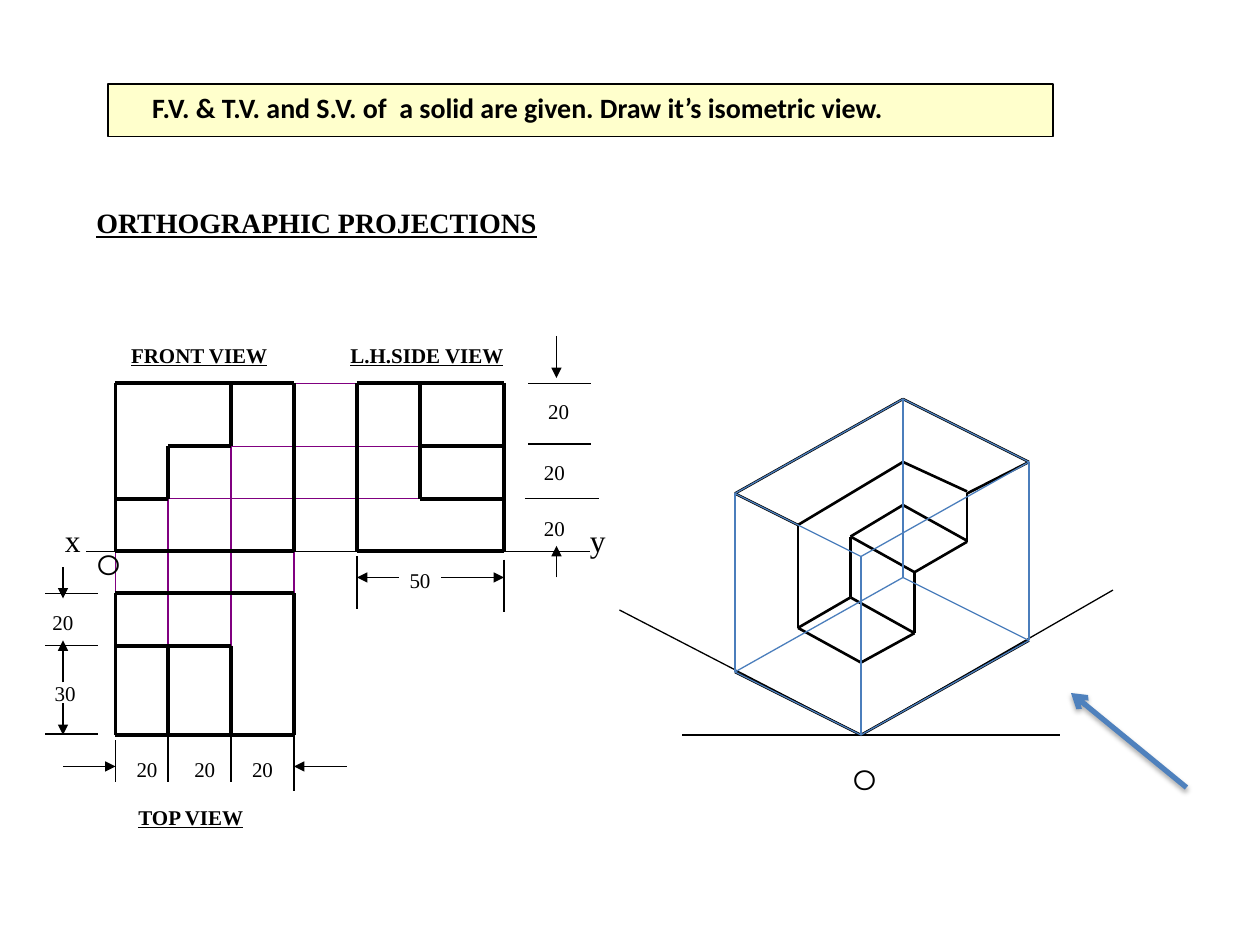
from itertools import pairwise

from lxml import etree
from pptx import Presentation
from pptx.dml.color import RGBColor
from pptx.enum.shapes import MSO_CONNECTOR, MSO_SHAPE
from pptx.enum.text import MSO_ANCHOR, MSO_AUTO_SIZE, PP_ALIGN
from pptx.oxml.ns import qn
from pptx.util import Inches, Pt

STRAIGHT = MSO_CONNECTOR.STRAIGHT
RECTANGLE = MSO_SHAPE.RECTANGLE
TOP = MSO_ANCHOR.TOP
FIT = MSO_AUTO_SIZE.SHAPE_TO_FIT_TEXT
LEFT, CENTER = PP_ALIGN.LEFT, PP_ALIGN.CENTER

COLUMNS, ROWS = 120, 90
BLACK, PURPLE, BLUE, ARROW_BLUE, CREAM = "000000", "800080", "4B7EBC", "4F81BD", "FFFFCC"
THIN, SOLID_EDGE, VIEW_EDGE, POINTER = 0.75, 1.5, 2.25, 3


def color(value):
    """Turn a hex string into a colour."""
    return RGBColor.from_string(value)


class Drawing:
    """Draws on one slide with a grid of columns and rows."""

    def __init__(self, presentation):
        """Add a blank slide and measure its grid."""
        self.slide = presentation.slides.add_slide(presentation.slide_layouts[6])
        self.column = presentation.slide_width / COLUMNS
        self.row = presentation.slide_height / ROWS
        self.font = "Times New Roman"

    def place(self, x, y):
        """Convert columns and rows to slide lengths."""
        return round(x * self.column), round(y * self.row)

    def line(self, start, end, width=THIN, ink=BLACK, arrow=None, shadow=False):
        """Draw one straight line, with an optional arrowhead and shadow."""
        connector = self.slide.shapes.add_connector(
            STRAIGHT, *self.place(*start), *self.place(*end))
        connector.line.width = Pt(width)
        connector.line.color.rgb = color(ink)
        properties = connector._element.spPr
        if arrow:
            etree.SubElement(properties.find(qn("a:ln")), qn("a:tailEnd"), type=arrow)
        effects = etree.SubElement(properties, qn("a:effectLst"))
        if shadow:
            outer = etree.SubElement(effects, qn("a:outerShdw"), blurRad=str(Pt(3.1)),
                                     dist=str(Pt(1.8)), dir="5400000", rotWithShape="0")
            shade = etree.SubElement(outer, qn("a:srgbClr"), val=BLACK)
            etree.SubElement(shade, qn("a:alpha"), val="35000")

    def chain(self, *points, **style):
        """Join successive points with lines."""
        for start, end in pairwise(points):
            self.line(start, end, **style)

    def panel(self, x, y, width, height, fill):
        """Draw a filled rectangle with a thin outline."""
        panel = self.slide.shapes.add_shape(
            RECTANGLE, *self.place(x, y), *self.place(width, height))
        panel.shadow.inherit = False
        panel.fill.solid()
        panel.fill.fore_color.rgb = color(fill)
        panel.line.color.rgb = color(BLACK)
        panel.line.width = Pt(THIN)

    def label(self, text, x, y, width, height=3.6, size=12, font=None,
              bold=None, underline=None, align=LEFT):
        """Add one line of text in the given format."""
        box = self.slide.shapes.add_textbox(*self.place(x, y), *self.place(width, height))
        frame = box.text_frame
        frame.word_wrap = False
        frame.auto_size = FIT
        frame.vertical_anchor = TOP
        paragraph = frame.paragraphs[0]
        paragraph.alignment = align
        run = paragraph.add_run()
        run.text = text
        run.font.name = font or self.font
        run.font.size = Pt(size)
        run.font.bold = bold
        run.font.underline = underline
        run.font.color.rgb = color(BLACK)


def draw_solid(drawing):
    """Draw the isometric view on its base axes."""
    origin = (82, 70)
    drawing.line((65, 70), (101, 70))
    for axis_end in ((106, 56.2), (59, 58.1)):
        drawing.line(origin, axis_end)
    edges = (
        ((70, 64), (70, 47), (86, 38), (98, 44), (98, 61), origin, (70, 64)),
        ((70, 47), (76, 50), (76, 59.8), (82, 63.1), origin),
        ((98, 44), (92.1, 47), (92.1, 51.6), (87.1, 54.5), (87.1, 60.3), (82, 63.1)),
        ((76, 50), (86, 44), (92.1, 46.8)),
        ((86, 44), (86, 48.1), (81, 51.1), (81, 56.9), (76, 59.8)),
        ((81, 51.1), (87.1, 54.5)),
        ((81, 56.9), (87.1, 60.3)),
        ((86, 48.1), (92.1, 51.5)),
    )
    for edge in edges:
        drawing.chain(*edge, width=SOLID_EDGE)


def draw_views(drawing):
    """Draw the three views and the projectors between them."""
    projectors = (
        ((21, 42.5), (43, 42.5)), ((14, 47.5), (44, 47.5)), ((25, 36.5), (37, 36.5)),
        ((22, 40.5), (22, 63.5)), ((16, 45.5), (16, 63.5)),
        ((11, 51.5), (11, 58.5)), ((28, 50.5), (28, 57.5)),
    )
    for start, end in projectors:
        drawing.line(start, end, ink=PURPLE)
    for left, top, right, bottom in ((11, 36.5, 28, 52.5), (34, 36.5, 48, 52.5),
                                     (11, 56.5, 28, 70)):
        drawing.chain((left, top), (right, top), (right, bottom), (left, bottom),
                      (left, top), width=VIEW_EDGE)
    inner_edges = (
        ((22, 36.5), (22, 42.5), (16, 42.5), (16, 47.5), (11, 47.5)),
        ((40, 36.5), (40, 47.5), (48, 47.5)),
        ((40, 42.5), (48, 42.5)),
        ((11, 61.5), (22, 61.5), (22, 70)),
        ((16, 61.5), (16, 70)),
    )
    for edge in inner_edges:
        drawing.chain(*edge, width=VIEW_EDGE)
    drawing.line((8.2, 52.5), (56.2, 52.5))
    for name, x, y, width in (("FRONT VIEW", 11.3, 32, 15.5), ("TOP VIEW", 12, 76, 12.6),
                              ("L.H.SIDE VIEW", 32.2, 32, 17)):
        drawing.label(name, x, y, width, bold=True, underline=True)
    for axis, x in (("x", 5), ("y", 55)):
        drawing.label(axis, x, 49, 4, 4.8, size=18)


def draw_dimensions(drawing):
    """Draw extension lines, dimension arrows and values."""
    for left, right, y in ((50.3, 56.3, 36.5), (50.3, 56.3, 42.3), (50, 57, 47.5),
                           (4.3, 9.3, 56.5), (4.3, 9.3, 61.5), (4.3, 9.3, 69.9)):
        drawing.line((left, y), (right, y))
    for x, top, bottom in ((34, 53, 58), (48, 53.3, 58.3), (11, 70.5, 74.5),
                           (16, 69.5, 74.5), (22, 69.5, 74.5), (28, 68.3, 75.3)):
        drawing.line((x, top), (x, bottom))
    arrows = (
        ((38, 55), (34, 55)), ((42, 55), (48, 55)),
        ((53, 32), (53, 36)), ((53, 55), (53, 52)),
        ((6, 67), (6, 70)), ((6, 65), (6, 61)), ((6, 54), (6, 57)),
        ((6, 73), (11, 73)), ((33, 73), (28, 73)),
    )
    for start, end in arrows:
        drawing.line(start, end, arrow="triangle")
    values = (
        ("20", 51, 37.4), ("20", 50.6, 43.2), ("20", 50.6, 48.5), ("50", 37.8, 53.5),
        ("20", 11.8, 71.5), ("20", 17.3, 71.5), ("20", 22.8, 71.5),
        ("20", 3.8, 57.5), ("30", 4, 64.2),
    )
    for value, x, y in values:
        drawing.label(value, x, y, 4.4, align=CENTER)


def draw_enclosing_box(drawing):
    """Draw the isometric box around the solid."""
    base = [(70, 64), (82, 70), (98, 61), (86, 55)]
    lid = [(x, y - 17) for x, y in base]
    for face in (base, lid):
        drawing.chain(*face, face[0], ink=BLUE)
    for corner, upper_corner in zip(base, lid):
        drawing.line(corner, upper_corner, ink=BLUE)


def main():
    """Build and save the slide."""
    presentation = Presentation()
    presentation.slide_width, presentation.slide_height = Inches(10), Inches(7.5)
    drawing = Drawing(presentation)
    drawing.label("ORTHOGRAPHIC PROJECTIONS", 8, 19, 44.5, 4.4, size=16,
                  bold=True, underline=True)
    draw_solid(drawing)
    draw_views(drawing)
    draw_dimensions(drawing)
    for x, y in ((8, 51.6), (80, 72)):
        drawing.label("O", x, y, 4.7, 4.4, size=16, font="Montserrat", align=CENTER)
    drawing.panel(10.3, 8, 90, 5, CREAM)
    drawing.label("F.V. & T.V. and S.V. of  a solid are given. Draw it’s isometric view.",
                  13.3, 8, 72.8, 4.4, size=16, font="Calibri", bold=True)
    drawing.line((113, 75), (102, 66), width=POINTER, ink=ARROW_BLUE,
                 arrow="arrow", shadow=True)
    draw_enclosing_box(drawing)
    presentation.save("out.pptx")


if __name__ == "__main__":
    main()
